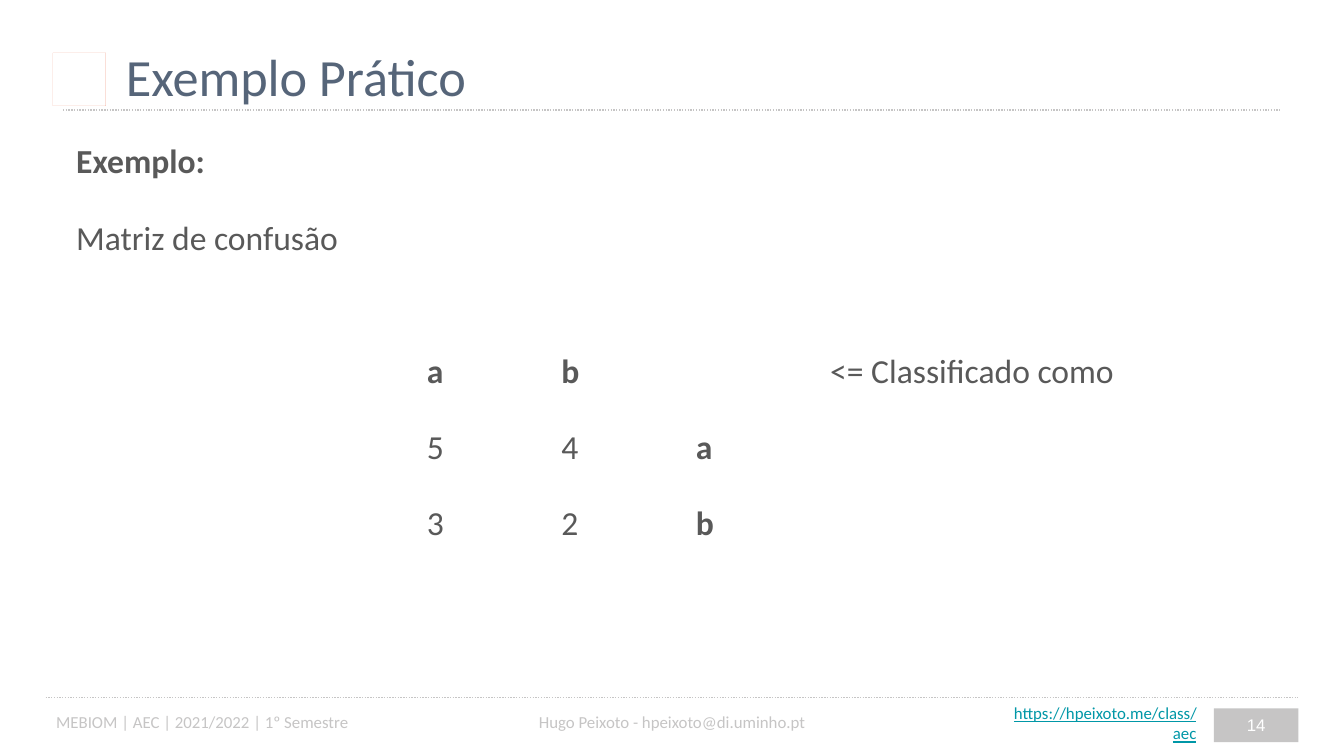
"""Build the "Exemplo Prático" slide with its confusion matrix."""

import dataclasses
import typing

import lxml.etree
import pptx
import pptx.dml.color
import pptx.enum.dml
import pptx.enum.shapes
import pptx.enum.text
import pptx.oxml.ns
import pptx.util

Cm = pptx.util.Cm
Align = pptx.enum.text.PP_ALIGN
Anchor = pptx.enum.text.MSO_ANCHOR
qn = pptx.oxml.ns.qn


@dataclasses.dataclass(frozen=True)
class Theme:
    font: str = "Calibri"
    number_font: str = "Arial"
    title: str = "566579"
    body: str = "595959"
    muted: str = "C6C5C5"
    link: str = "0097A7"
    accent: str = "EE795B"
    white: str = "FFFFFF"
    title_size: float = 28
    body_size: float = 18
    small_size: float = 9
    rule_width: float = 0.75


THEME = Theme()


class Area(typing.NamedTuple):
    left: float
    top: float
    width: float
    height: float


class Span(typing.NamedTuple):
    text: str
    bold: bool = False


@dataclasses.dataclass(frozen=True)
class Para:
    spans: tuple[Span, ...]
    before: float = 0
    after: float = 0


@dataclasses.dataclass(frozen=True)
class TextBox:
    area: Area
    paras: tuple[Para, ...]
    size: float = THEME.body_size
    color: str = THEME.body
    font: str = THEME.font
    align: Align = Align.LEFT
    anchor: Anchor = Anchor.TOP
    margin_top: float = 0.25
    line_spacing: float = 1.0
    indent: float = 0
    tabs: tuple[float, ...] = ()
    underline: bool = False
    fill: str | None = None


@dataclasses.dataclass(frozen=True)
class Rule:
    left: float
    right: float
    y: float


def line(text: str) -> tuple[Para, ...]:
    """Return a single plain paragraph."""
    return (Para((Span(text),)),)


def footer(area: Area, text: str, **style: typing.Any) -> TextBox:
    """Return a small, vertically centred footer box."""
    settings = dict(size=THEME.small_size, color=THEME.muted, anchor=Anchor.MIDDLE, margin_top=0.1)
    return TextBox(area, line(text), **(settings | style))


TAB_STEP = 2.54
GAP = 16
RULES = (Rule(0.86, 24.54, 13.18), Rule(1.19, 24.21, 2.08))
BOXES = (
    footer(Area(0.86, 13.18, 23.68, 1.09), "Hugo Peixoto - hpeixoto@di.uminho.pt", align=Align.CENTER),
    footer(Area(18.59, 13.16, 4.27, 1.17), "https://hpeixoto.me/class/aec",
           align=Align.RIGHT, color=THEME.link, underline=True),
    footer(Area(0.81, 13.18, 6.02, 1.09), "MEBIOM | AEC | 2021/2022 | 1º Semestre"),
    footer(Area(22.94, 13.39, 1.6, 0.64), "14", align=Align.CENTER, color=THEME.white,
           font=THEME.number_font, margin_top=0.25, fill=THEME.muted),
    TextBox(Area(0.86, 0.58, 23.68, 1.3), line("Exemplo Prático"),
            size=THEME.title_size, color=THEME.title, indent=1.27),
    TextBox(Area(1.19, 2.29, 23.02, 10.44), (
        Para((Span("Exemplo:", True),)),
        Para((Span("Matriz de confusão"),), GAP, GAP),
    ), line_spacing=1.15),
    TextBox(Area(7.82, 6.25, 15.54, 4.88), (
        Para((Span("a\tb", True), Span("\t\t<= Classificado como"))),
        Para((Span("5\t4\t"), Span("a", True)), GAP),
        Para((Span("3\t2\t"), Span("b", True)), GAP, GAP),
    ), line_spacing=1.15, tabs=tuple(TAB_STEP * step for step in (1, 2, 3))),
)
CLIPBOARD = (
    (1.57, 1.02), (1.86, 1.02), (1.89, 1.05), (1.89, 1.1), (2.05, 1.1), (2.08, 1.13),
    (2.08, 1.83), (2.05, 1.86), (1.38, 1.86), (1.35, 1.83), (1.35, 1.13), (1.38, 1.1),
    (1.47, 1.1), (1.5, 1.13), (1.47, 1.17), (1.42, 1.17), (1.42, 1.79), (2.01, 1.79),
    (2.01, 1.17), (1.84, 1.17), (1.81, 1.14), (1.81, 1.08), (1.62, 1.08), (1.62, 1.17),
    (1.78, 1.17), (1.81, 1.2), (1.78, 1.24), (1.57, 1.24), (1.54, 1.21), (1.54, 1.05),
)
CHECK_MARK = (
    (1.83, 1.38), (1.86, 1.38), (1.86, 1.42), (1.68, 1.6), (1.65, 1.6),
    (1.56, 1.51), (1.56, 1.48), (1.59, 1.47), (1.66, 1.53), (1.81, 1.39),
)


def rgb(color: str) -> pptx.dml.color.RGBColor:
    """Convert a hex string to a colour."""
    return pptx.dml.color.RGBColor.from_string(color)


def draw_rule(page: typing.Any, rule: Rule) -> None:
    """Draw a dotted horizontal rule."""
    connector = page.shapes.add_connector(
        pptx.enum.shapes.MSO_CONNECTOR.STRAIGHT,
        Cm(rule.left), Cm(rule.y), Cm(rule.right), Cm(rule.y))
    connector.line.color.rgb = rgb(THEME.muted)
    connector.line.width = pptx.util.Pt(THEME.rule_width)
    connector.line.dash_style = pptx.enum.dml.MSO_LINE.ROUND_DOT
    lxml.etree.SubElement(connector._element.spPr, qn("a:effectLst"))


def draw_box(page: typing.Any, box: TextBox) -> None:
    """Draw a text box, on a filled rectangle if it has a fill."""
    place = [Cm(length) for length in box.area]
    if box.fill:
        shape = page.shapes.add_shape(pptx.enum.shapes.MSO_SHAPE.RECTANGLE, *place)
        shape.shadow.inherit = False
        shape.fill.solid()
        shape.fill.fore_color.rgb = rgb(box.fill)
        shape.line.fill.background()
    else:
        shape = page.shapes.add_textbox(*place)
    frame = shape.text_frame
    frame.word_wrap = True
    frame.vertical_anchor = box.anchor
    frame.margin_left = frame.margin_right = frame.margin_bottom = Cm(0.25)
    frame.margin_top = Cm(box.margin_top)
    for index, para in enumerate(box.paras):
        paragraph = frame.add_paragraph() if index else frame.paragraphs[0]
        write_para(paragraph, para, box)


def write_para(paragraph: typing.Any, para: Para, box: TextBox) -> None:
    """Fill and format one paragraph."""
    paragraph.alignment = box.align
    paragraph.line_spacing = box.line_spacing
    paragraph.space_before = pptx.util.Pt(para.before)
    paragraph.space_after = pptx.util.Pt(para.after)
    properties = paragraph._p.get_or_add_pPr()
    if box.indent:
        properties.set("indent", str(Cm(box.indent)))
    if box.tabs:
        tab_list = lxml.etree.SubElement(properties, qn("a:tabLst"))
        for position in box.tabs:
            lxml.etree.SubElement(tab_list, qn("a:tab"), pos=str(Cm(position)), algn="l")
    font = paragraph.font
    font.name = box.font
    font.size = pptx.util.Pt(box.size)
    font.color.rgb = rgb(box.color)
    font.underline = box.underline
    for span in para.spans:
        run = paragraph.add_run()
        run.text = span.text
        run.font.bold = span.bold


def draw_outline(page: typing.Any, points: tuple[tuple[float, float], ...]) -> None:
    """Draw a closed shape in the accent colour."""
    builder = page.shapes.build_freeform(*points[0], scale=Cm(1))
    builder.add_line_segments(points[1:], close=True)
    shape = builder.convert_to_shape()
    shape.shadow.inherit = False
    shape.fill.solid()
    shape.fill.fore_color.rgb = rgb(THEME.accent)
    shape.line.fill.background()


def main() -> None:
    """Build and save the deck."""
    deck = pptx.Presentation()
    deck.slide_width, deck.slide_height = Cm(25.4), Cm(14.29)
    page = deck.slides.add_slide(deck.slide_layouts[6])
    for rule in RULES:
        draw_rule(page, rule)
    for box in BOXES:
        draw_box(page, box)
    for points in (CLIPBOARD, CHECK_MARK):
        draw_outline(page, points)
    deck.save("out.pptx")


if __name__ == "__main__":
    main()
